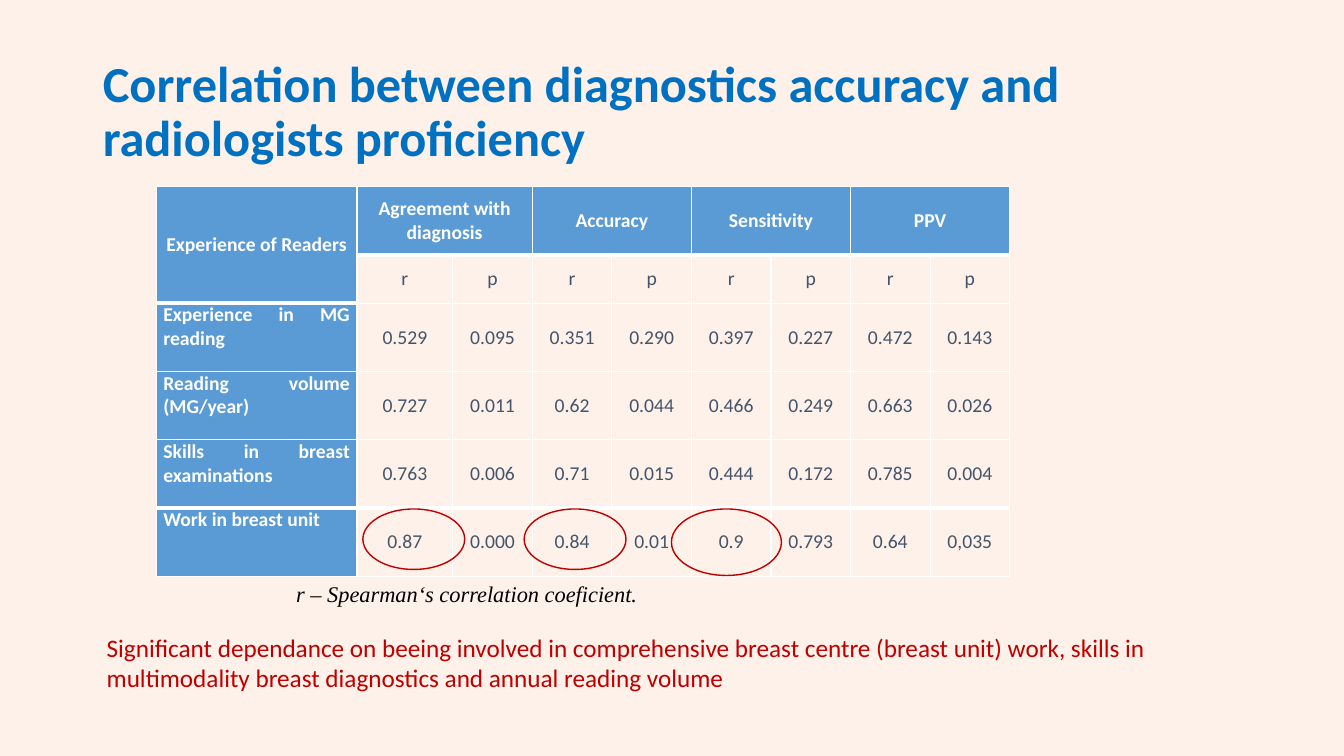
import dataclasses

import lxml.etree
import pptx
import pptx.dml.color
import pptx.enum.shapes
import pptx.enum.text
import pptx.oxml.ns
import pptx.util

ALIGN = pptx.enum.text.PP_ALIGN
ANCHOR = pptx.enum.text.MSO_ANCHOR


@dataclasses.dataclass(frozen=True)
class Theme:
    background: str = "FDF1E9"
    title: str = "0070C0"
    accent: str = "C00000"
    header: str = "5B9BD5"
    white: str = "FFFFFF"
    body: str = "44546A"
    black: str = "000000"
    font: str = "Calibri"
    caption_font: str = "Times New Roman"
    title_size: int = 36
    finding_size: int = 18
    caption_size: int = 16
    table_size: int = 14
    thin: int = 1
    thick: int = 3


def rgb(color):
    return pptx.dml.color.RGBColor.from_string(color)


class SlideBuilder:
    """Places elements on a grid of 100 columns by 100 rows."""

    def __init__(self, presentation, theme):
        self.theme = theme
        self.column = presentation.slide_width / 100
        self.row = presentation.slide_height / 100
        self.slide = presentation.slides.add_slide(presentation.slide_layouts[5])
        self.slide.background.fill.solid()
        self.slide.background.fill.fore_color.rgb = rgb(theme.background)

    def box(self, left, top, width, height):
        return (round(left * self.column), round(top * self.row),
                round(width * self.column), round(height * self.row))

    def set_text(self, text_frame, text, size, color, font=None, bold=False,
                 italic=False, align=ALIGN.LEFT):
        text_frame.text = text
        paragraph = text_frame.paragraphs[0]
        paragraph.alignment = align
        for run in paragraph.runs:
            run.font.name = font or self.theme.font
            run.font.size = pptx.util.Pt(size)
            run.font.bold = bold
            run.font.italic = italic
            run.font.color.rgb = rgb(color)
        return paragraph

    def title(self, text, area):
        shape = self.slide.shapes.title
        shape.left, shape.top, shape.width, shape.height = self.box(*area)
        text_frame = shape.text_frame
        text_frame.word_wrap = True
        text_frame.auto_size = pptx.enum.text.MSO_AUTO_SIZE.NONE
        text_frame.vertical_anchor = ANCHOR.MIDDLE
        paragraph = self.set_text(text_frame, text, self.theme.title_size,
                                  self.theme.title, bold=True)
        paragraph.line_spacing = 0.9

    def text(self, text, area, size, color, wrap=True, **style):
        shape = self.slide.shapes.add_textbox(*self.box(*area))
        shape.text_frame.word_wrap = wrap
        shape.text_frame.auto_size = pptx.enum.text.MSO_AUTO_SIZE.SHAPE_TO_FIT_TEXT
        return self.set_text(shape.text_frame, text, size, color, **style)

    def ellipse(self, area):
        shape = self.slide.shapes.add_shape(
            pptx.enum.shapes.MSO_SHAPE.OVAL, *self.box(*area))
        shape.shadow.inherit = False
        shape.fill.background()
        shape.line.color.rgb = rgb(self.theme.accent)
        shape.line.width = pptx.util.Pt(1)

    def borders(self, cell, **widths):
        properties = cell._tc.get_or_add_tcPr()
        for side, width in widths.items():
            line = lxml.etree.SubElement(
                properties, pptx.oxml.ns.qn("a:ln" + side), w=str(pptx.util.Pt(width)))
            fill = lxml.etree.SubElement(line, pptx.oxml.ns.qn("a:solidFill"))
            lxml.etree.SubElement(fill, pptx.oxml.ns.qn("a:srgbClr"), val=self.theme.white)

    def cell(self, cell, text, row, column):
        theme = self.theme
        filled = row == 0 or column == 0
        row_label = row > 1 and column == 0

        # Thick rules close the header and set off the last row
        thick_rules = {1, 2, 5} if column == 0 else {1, 5}
        self.borders(cell, L=theme.thin, R=theme.thin,
                     T=theme.thick if row in thick_rules else theme.thin,
                     B=theme.thick if row + 1 in thick_rules else theme.thin)
        if filled:
            cell.fill.solid()
            cell.fill.fore_color.rgb = rgb(theme.header)
        else:
            cell.fill.background()

        cell.margin_left = cell.margin_right = pptx.util.Inches(0.07)
        cell.margin_top = cell.margin_bottom = 0
        cell.vertical_anchor = ANCHOR.TOP if row_label else ANCHOR.MIDDLE
        self.set_text(cell.text_frame, text, theme.table_size,
                      theme.white if filled else theme.body, bold=filled,
                      align=ALIGN.JUSTIFY if row_label else ALIGN.CENTER)

    def table(self, rows, left, top, widths, heights, merges):
        area = self.box(left, top, sum(widths), sum(heights))
        table = self.slide.shapes.add_table(len(heights), len(widths), *area).table
        table.first_row = table.horz_banding = False
        for column, width in zip(table.columns, widths):
            column.width = round(width * self.column)
        for row, height in zip(table.rows, heights):
            row.height = round(height * self.row)
        for row_index, values in enumerate(rows):
            for column_index, value in enumerate(values):
                self.cell(table.cell(row_index, column_index), value,
                          row_index, column_index)
        for first, last in merges:
            table.cell(*first).merge(table.cell(*last))


MEASURES = ["Agreement with diagnosis", "Accuracy", "Sensitivity", "PPV"]
RESULTS = [
    ["Experience in MG reading",
     "0.529", "0.095", "0.351", "0.290", "0.397", "0.227", "0.472", "0.143"],
    ["Reading volume (MG/year)",
     "0.727", "0.011", "0.62", "0.044", "0.466", "0.249", "0.663", "0.026"],
    ["Skills in breast examinations",
     "0.763", "0.006", "0.71", "0.015", "0.444", "0.172", "0.785", "0.004"],
    ["Work in breast unit",
     "0.87", "0.000", "0.84", "0.01", "0.9", "0.793", "0.64", "0,035"],
]


def main():
    presentation = pptx.Presentation()
    presentation.slide_width = pptx.util.Inches(13.33)
    presentation.slide_height = pptx.util.Inches(7.5)
    theme = Theme()
    builder = SlideBuilder(presentation, theme)

    # Title and main finding
    builder.title("Correlation between diagnostics accuracy and radiologists proficiency",
                  (6.9, 5.33, 86.27, 19.33))
    builder.text("Significant dependance on beeing involved in comprehensive breast "
                 "centre (breast unit) work, skills in multimodality breast "
                 "diagnostics and annual reading volume",
                 (7.2, 82.93, 84.7, 9.47), theme.finding_size, theme.accent)

    # Correlation table: each measure spans an r and a p column
    header = ["Experience of Readers"]
    for measure in MEASURES:
        header += [measure, ""]
    symbols = [""] + ["r", "p"] * len(MEASURES)
    merges = [((0, 0), (1, 0))]
    merges += [((0, column), (0, column + 1)) for column in range(1, len(header), 2)]
    builder.table([header, symbols] + RESULTS, 11.63, 24.67,
                  widths=[14.93, 7.13] + [5.92] * 7,
                  heights=[9.03, 6.4] + [9.03] * len(RESULTS), merges=merges)

    # Table caption
    caption = builder.text("r – Spearman‘s correlation coeficient.",
                           (17.55, 76.13, 31.06, 4.93), theme.caption_size,
                           theme.black, wrap=False, font=theme.caption_font,
                           italic=True, align=ALIGN.JUSTIFY)
    caption._p.get_or_add_pPr().set("indent", str(pptx.util.Inches(0.5)))

    # Rings around the strongest correlations
    for left, width, height in [(27, 7.58, 8), (39, 7.58, 8), (49.96, 8.18, 8.8)]:
        builder.ellipse((left, 67.33, width, height))

    presentation.save("out.pptx")


if __name__ == "__main__":
    main()
